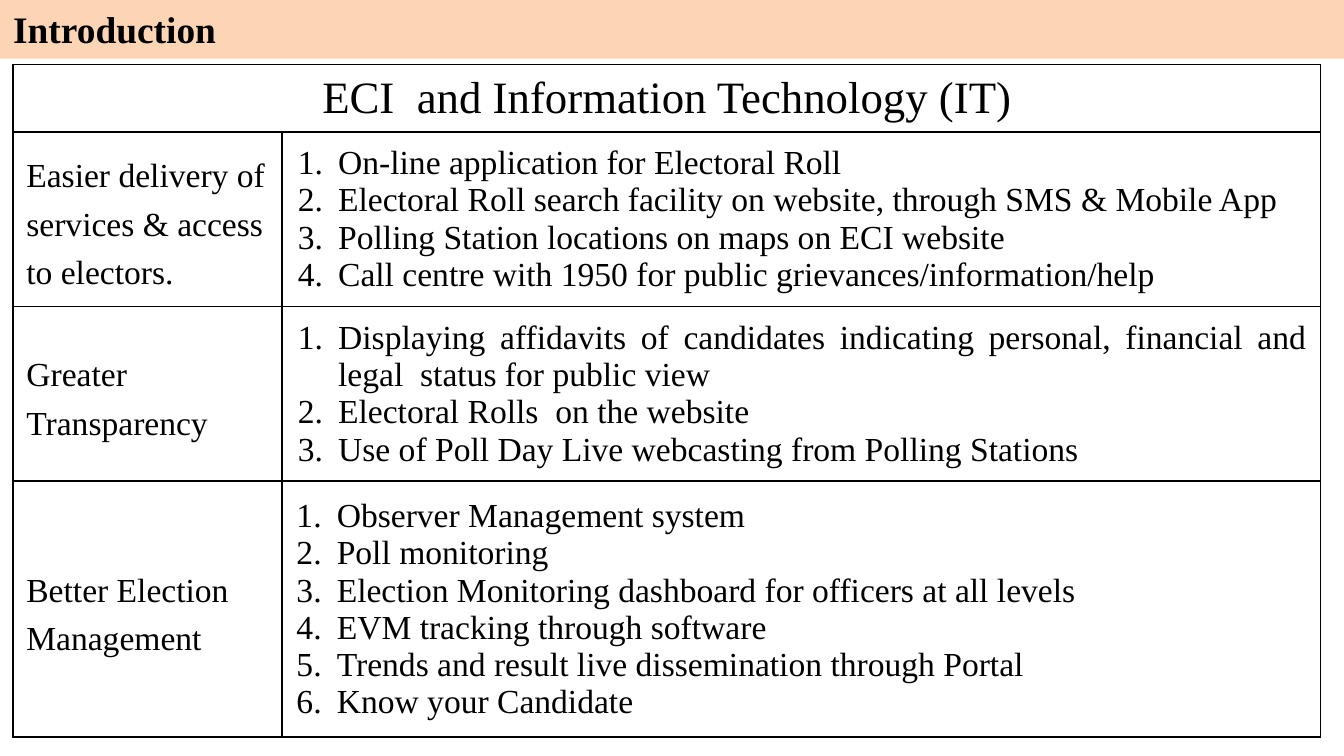
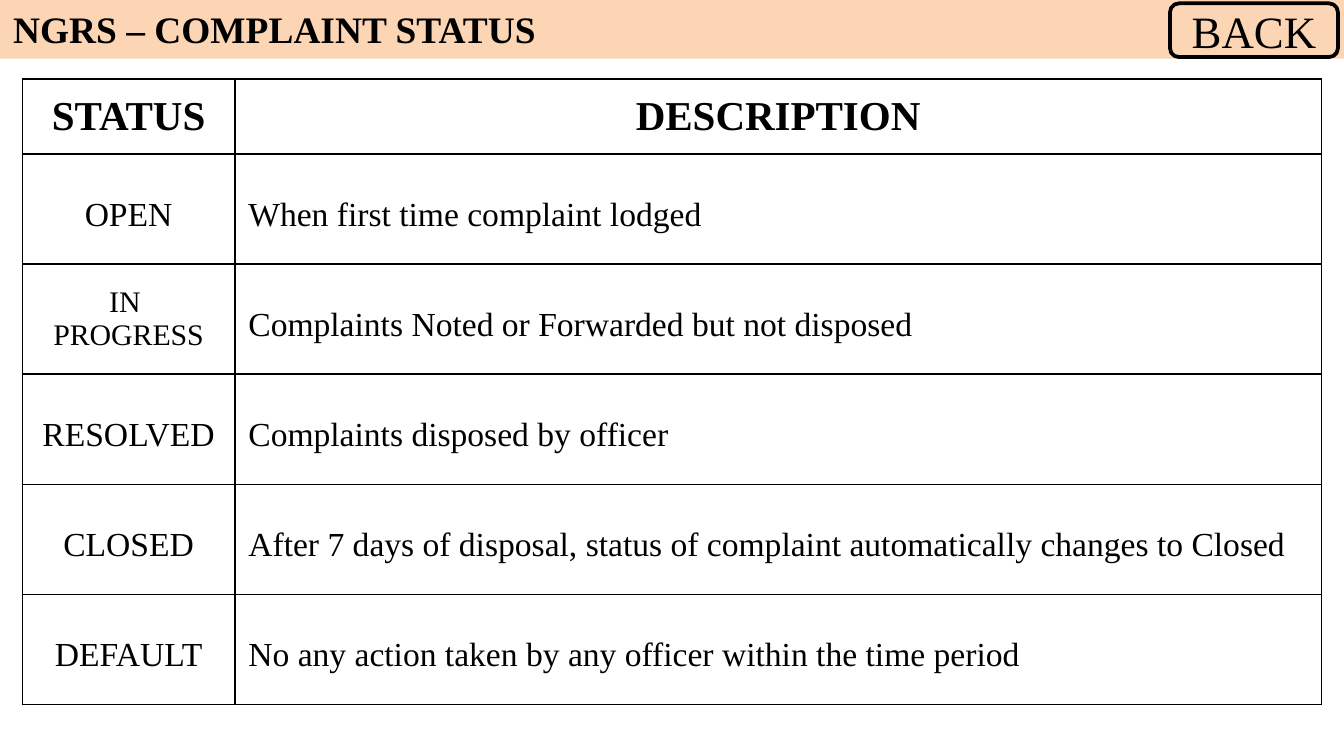
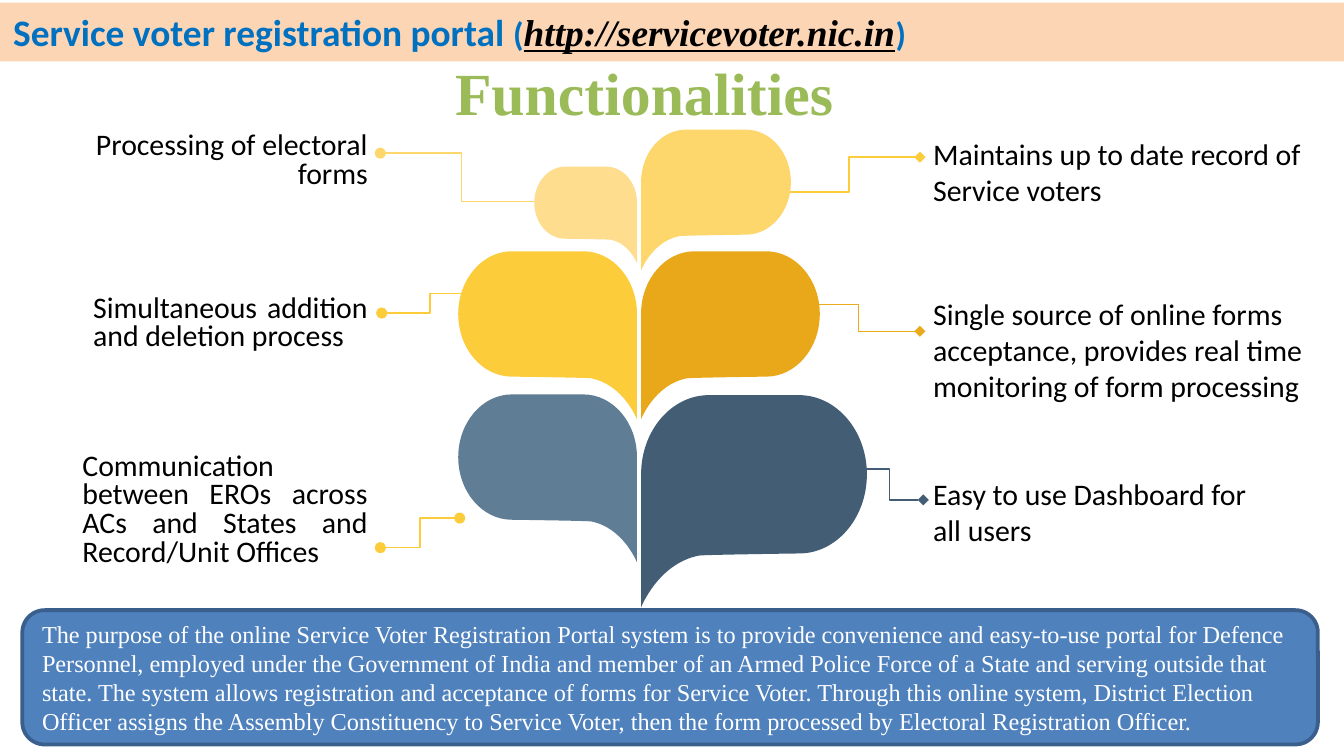
import dataclasses

import lxml.etree
import pptx
import pptx.dml.color
import pptx.enum.shapes
import pptx.enum.text
import pptx.oxml.ns
import pptx.util

ALIGN = pptx.enum.text.PP_ALIGN
ANCHOR = pptx.enum.text.MSO_ANCHOR
FIT = pptx.enum.text.MSO_AUTO_SIZE
SHAPE = pptx.enum.shapes.MSO_SHAPE
qn = pptx.oxml.ns.qn


@dataclasses.dataclass(frozen=True)
class Theme:
    serif: str = "Times New Roman"
    sans: str = "Calibri"
    ink: str = "000000"
    paper: str = "FFFFFF"
    band: str = "FCD5B5"
    portal: str = "0070C0"
    heading: str = "9BBB59"
    purpose: str = "4F81BD"
    purpose_edge: str = "3A5F8C"
    pale: str = "FEDE8E"
    light: str = "FDD66C"
    yellow: str = "FCCC3B"
    gold: str = "E9AA1B"
    amber: str = "E8A81A"
    slate: str = "5F7D95"
    navy: str = "435D74"
    heading_size: int = 32
    large: int = 24
    column_head: int = 22
    title: int = 20
    body: int = 18
    label: int = 16
    purpose_size: int = 13


THEME = Theme()
COLUMNS, ROWS = 100, 56.25
SLIDE_WIDTH = pptx.util.Inches(10)

SERVICES = [
    ("Easier delivery of services & access to electors.", 3.2, [
        "On-line application for Electoral Roll ",
        "Electoral Roll search facility on website, through SMS & Mobile App ",
        "Polling Station locations on maps on ECI website",
        "Call centre with 1950 for public grievances/information/help ",
    ]),
    ("Greater Transparency", 3.2, [
        "Displaying affidavits of candidates indicating personal, financial and legal  status for public view ",
        "Electoral Rolls  on the website",
        "Use of Poll Day Live webcasting from Polling Stations ",
    ]),
    ("Better Election Management", 3.1, [
        "Observer Management system ",
        "Poll monitoring",
        "Election Monitoring dashboard for officers at all levels",
        "EVM tracking through software",
        "Trends and result live dissemination through Portal",
        "Know your Candidate",
    ]),
]

STATUSES = [
    (["OPEN"], "When first time complaint lodged"),
    (["IN ", "PROGRESS"], "Complaints Noted or Forwarded but not disposed"),
    (["RESOLVED"], "Complaints disposed by officer"),
    (["CLOSED"], "After 7 days of disposal, status of complaint automatically changes to Closed"),
    (["DEFAULT"], "No any action taken by any officer within the time period"),
]

PURPOSE = (
    "The purpose of the online Service Voter Registration Portal system is to provide convenience "
    "and easy-to-use portal for Defence Personnel, employed under the Government of India and member "
    "of an Armed Police Force of a State and serving outside that state. The system allows registration "
    "and acceptance of forms for Service Voter. Through this online system, District Election Officer "
    "assigns the Assembly Constituency to Service Voter, then the form processed by Electoral "
    "Registration Officer."
)

LEFT_LABELS = [
    ("Communication between EROs across ACs and States and Record/Unit Offices",
     (5.15, 33, 23.2, 10), ALIGN.JUSTIFY),
    ("Processing of electoral forms", (5.15, 6.85, 23.2, 10.3), ALIGN.RIGHT),
    ("Simultaneous addition and deletion process", (5.95, 18.15, 22.4, 11.9), ALIGN.JUSTIFY),
]

RIGHT_LABELS = [
    ("Maintains up to date record of Service voters", (68.45, 9.1, 29.7, 9)),
    ("Single source of online forms acceptance, provides real time monitoring of form processing",
     (68.45, 21, 29.7, 8.5)),
    ("Easy to use Dashboard for all users", (68.45, 34.4, 26.5, 6)),
]

BRANCHES = [
    ((28.3, 11.4), (40.4, 15), THEME.light, "oval"),
    ((28.4, 23.3), (35.6, 21.85), THEME.yellow, "oval"),
    ((57.9, 14.3), (68.45, 11.7), THEME.yellow, "diamond"),
    ((59.3, 22.65), (68.45, 24.65), THEME.gold, "diamond"),
    ((63.7, 34.9), (68.7, 37.2), THEME.navy, "diamond"),
]
FRONT_BRANCH = ((28.3, 40.75), (34.2, 38.55), THEME.yellow, "oval")

RIGHT_STEM, LEFT_STEM = 47.7, 47.4
LEAVES = [
    (RIGHT_STEM, 18.7, 13.3, THEME.amber),
    (RIGHT_STEM, 9.65, 11.15, THEME.light),
    (LEFT_STEM, 12.4, -7.65, THEME.pale),
    (LEFT_STEM, 18.7, -13.3, THEME.yellow),
    (LEFT_STEM, 29.35, -13.3, THEME.slate),
    (RIGHT_STEM, 29.4, 16.8, THEME.navy),
]
LEAF_START = (30, 0)
LEAF_CURVES = [
    (13.5, 0), (0, 16.7), (0, 37.3),
    (0, 58), (0, 100), (0, 100),
    (0, 100), (7.5, 79.4), (25.6, 75.6),
    (28, 75.2), (70, 74.6), (70, 74.6),
    (86.5, 74.6), (100, 58), (100, 37.3),
    (100, 16.7), (86.5, 0), LEAF_START[::-1],
]
LEAF_CURVES[-1] = (70, 0)
LEAF_RATIO = 0.94


def grid(*units):
    return [round(SLIDE_WIDTH * unit / COLUMNS) for unit in units]


def rgb(color):
    return pptx.dml.color.RGBColor.from_string(color)


def apply_format(target, formats):
    for name, value in formats.items():
        setattr(target, name, value)


def add_run(paragraph, words, size, color=THEME.ink, **formats):
    run = paragraph.add_run()
    run.text = words
    apply_format(run.font, {"name": THEME.serif, "size": pptx.util.Pt(size), **formats})
    run.font.color.rgb = rgb(color)


def write(frame, lines, size, color=THEME.ink, paragraph_format=None, **formats):
    for position, words in enumerate(lines):
        paragraph = frame.paragraphs[0] if position == 0 else frame.add_paragraph()
        apply_format(paragraph, paragraph_format or {})
        add_run(paragraph, words, size, color, **formats)


def hang(paragraph, left, first):
    properties = paragraph._p.get_or_add_pPr()
    for name, length in zip(("marL", "indent"), grid(left, first)):
        properties.set(name, str(length))
    return properties


def number(paragraph, left):
    properties = hang(paragraph, left, -3)
    lxml.etree.SubElement(properties, qn("a:buFont"), typeface="+mj-lt")
    lxml.etree.SubElement(properties, qn("a:buAutoNum"), type="arabicPeriod")


def add_panel(slide, outline, area, fill=None, edge=None):
    panel = slide.shapes.add_shape(outline, *grid(*area))
    panel.shadow.inherit = False
    if fill:
        panel.fill.solid()
        panel.fill.fore_color.rgb = rgb(fill)
    else:
        panel.fill.background()
    if edge:
        panel.line.color.rgb = rgb(edge)
        panel.line.width = pptx.util.Pt(2)
    else:
        panel.line.fill.background()
    panel.text_frame.word_wrap = True
    return panel


def add_band(slide, top=0):
    band = add_panel(slide, SHAPE.RECTANGLE, (0, top, COLUMNS, 4.37), THEME.band)
    apply_format(band.text_frame, {"vertical_anchor": ANCHOR.TOP, "auto_size": FIT.SHAPE_TO_FIT_TEXT})
    title = band.text_frame.paragraphs[0]
    title.alignment = ALIGN.LEFT
    return title


def rule_cell(cell):
    properties = cell._tc.get_or_add_tcPr()
    for side in ("a:lnL", "a:lnR", "a:lnT", "a:lnB"):
        edge = lxml.etree.SubElement(properties, qn(side), w=str(pptx.util.Pt(1)))
        ink = lxml.etree.SubElement(edge, qn("a:solidFill"))
        lxml.etree.SubElement(ink, qn("a:srgbClr"), val=THEME.ink)
    cell.fill.background()
    cell.vertical_anchor = ANCHOR.MIDDLE


def add_ruled_table(slide, left, top, widths, heights):
    area = grid(left, top, sum(widths), sum(heights))
    table = slide.shapes.add_table(len(heights), len(widths), *area).table
    apply_format(table, {"first_row": False, "horz_banding": False})
    for column, width in zip(table.columns, grid(*widths)):
        column.width = width
    for row, height in zip(table.rows, grid(*heights)):
        row.height = height
    for cell in table.iter_cells():
        rule_cell(cell)
    return table


def add_label(slide, words, area, **paragraph_format):
    label = slide.shapes.add_textbox(*grid(*area))
    inset = pptx.util.Inches(0.1)
    apply_format(label.text_frame, {
        "word_wrap": True, "margin_top": inset, "margin_bottom": inset,
    })
    write(label.text_frame, [words], THEME.label, paragraph_format=paragraph_format, name=THEME.sans)
    return label


def add_branch(slide, start, end, color, tip):
    branch = slide.shapes.add_connector(
        pptx.enum.shapes.MSO_CONNECTOR.ELBOW, *grid(*start, *end))
    branch.line.color.rgb = rgb(color)
    branch.line.width = pptx.util.Pt(0.75)
    properties = branch.element.spPr
    for tag in ("a:headEnd", "a:tailEnd"):
        lxml.etree.SubElement(properties.find(qn("a:ln")), qn(tag), type=tip)
    lxml.etree.SubElement(properties, qn("a:effectLst"))


def bend_segments(leaf):
    segments = list(leaf.element.iter(qn("a:lnTo")))
    for first in range(0, len(segments), 3):
        curve = lxml.etree.Element(qn("a:cubicBezTo"))
        segments[first].addprevious(curve)
        for segment in segments[first:first + 3]:
            curve.append(segment[0])
            segment.getparent().remove(segment)


def add_leaf(slide, stem, top, reach, color):
    height = abs(reach) * LEAF_RATIO
    start, *rest = [
        grid(stem + reach * x / 100, top + height * y / 100) for x, y in (LEAF_START, *LEAF_CURVES)
    ]
    builder = slide.shapes.build_freeform(*start)
    builder.add_line_segments(rest, close=True)
    leaf = builder.convert_to_shape()
    bend_segments(leaf)
    leaf.shadow.inherit = False
    leaf.fill.solid()
    leaf.fill.fore_color.rgb = rgb(color)
    leaf.line.fill.background()


def introduction(slide):
    title = add_band(slide)
    title.alignment = ALIGN.JUSTIFY
    hang(title, 2.5, -2.5)
    add_run(title, "Introduction", THEME.title, bold=True)
    table = add_ruled_table(slide, 0.96, 4.8, (20, 77.3), (4.9, 13, 13, 19.05))
    table.cell(0, 0).merge(table.cell(0, 1))
    write(table.cell(0, 0).text_frame, ["ECI  and Information Technology (IT)"],
          THEME.large, paragraph_format={"alignment": ALIGN.CENTER})
    for row, (aim, indent, measures) in enumerate(SERVICES, 1):
        write(table.cell(row, 0).text_frame, [aim], THEME.body,
              paragraph_format={"line_spacing": pptx.util.Pt(26)})
        listing = table.cell(row, 1).text_frame
        write(listing, measures, THEME.body,
              paragraph_format={"alignment": ALIGN.JUSTIFY, "level": 1})
        for paragraph in listing.paragraphs:
            number(paragraph, indent)


def complaint_status(slide):
    add_run(add_band(slide), "NGRS – COMPLAINT STATUS", THEME.title, bold=True)
    back = add_panel(slide, SHAPE.ROUNDED_RECTANGLE, (87.05, 0.25, 12.5, 4), edge=THEME.ink)
    back.text_frame.vertical_anchor = ANCHOR.MIDDLE
    centred = {"alignment": ALIGN.CENTER}
    write(back.text_frame, ["BACK"], THEME.large, paragraph_format=centred)
    table = add_ruled_table(slide, 1.66, 5.88, (15.82, 80.84), [5.57] + [8.2] * len(STATUSES))
    for column, head in enumerate(("STATUS", "DESCRIPTION")):
        write(table.cell(0, column).text_frame, [head], THEME.column_head,
              paragraph_format=centred, bold=True)
    spaced = {"line_spacing": pptx.util.Pt(26)}
    for row, (status, description) in enumerate(STATUSES, 1):
        stacked = len(status) > 1
        name, meaning = (table.cell(row, column).text_frame for column in (0, 1))
        write(name, status, THEME.label if stacked else THEME.body,
              paragraph_format=centred if stacked else {**centred, **spaced})
        write(meaning, [description], THEME.body,
              paragraph_format={"alignment": ALIGN.JUSTIFY, **spaced})
        for paragraph in (*name.paragraphs, *meaning.paragraphs):
            hang(paragraph, 3.75, -3.75)


def registration_portal(slide):
    title = add_band(slide, 0.2)
    portal = {"color": THEME.portal, "name": THEME.sans, "bold": True}
    add_run(title, "Service voter registration portal ", THEME.title, **portal)
    add_run(title, "(", THEME.body, **portal)
    add_run(title, "http://servicevoter.nic.in", THEME.title, bold=True, italic=True, underline=True)
    add_run(title, ")", THEME.body, **portal)

    purpose = add_panel(slide, SHAPE.ROUNDED_RECTANGLE, (1.66, 45.4, 96.4, 10),
                        THEME.purpose, THEME.purpose_edge)
    purpose.text_frame.vertical_anchor = ANCHOR.MIDDLE
    write(purpose.text_frame, [PURPOSE], THEME.purpose_size, THEME.paper, {"alignment": ALIGN.LEFT})

    for words, area in RIGHT_LABELS:
        add_label(slide, words, area)
    for words, area, alignment in LEFT_LABELS:
        label = add_label(slide, words, area, alignment=alignment, line_spacing=0.8)
        label.text_frame.vertical_anchor = ANCHOR.MIDDLE
    for branch in BRANCHES:
        add_branch(slide, *branch)
    for leaf in LEAVES:
        add_leaf(slide, *leaf)
    add_branch(slide, *FRONT_BRANCH)

    heading = slide.shapes.add_textbox(*grid(32.75, 3.65, 30.4, 6.4))
    apply_format(heading.text_frame, {"word_wrap": False, "auto_size": FIT.SHAPE_TO_FIT_TEXT})
    write(heading.text_frame, ["Functionalities"], THEME.heading_size, THEME.heading,
          {"alignment": ALIGN.CENTER}, bold=True)


def main():
    deck = pptx.Presentation()
    deck.slide_width, deck.slide_height = grid(COLUMNS, ROWS)
    blank = deck.slide_layouts[6]
    for fill_slide in (introduction, complaint_status, registration_portal):
        fill_slide(deck.slides.add_slide(blank))
    deck.save("out.pptx")


if __name__ == "__main__":
    main()
